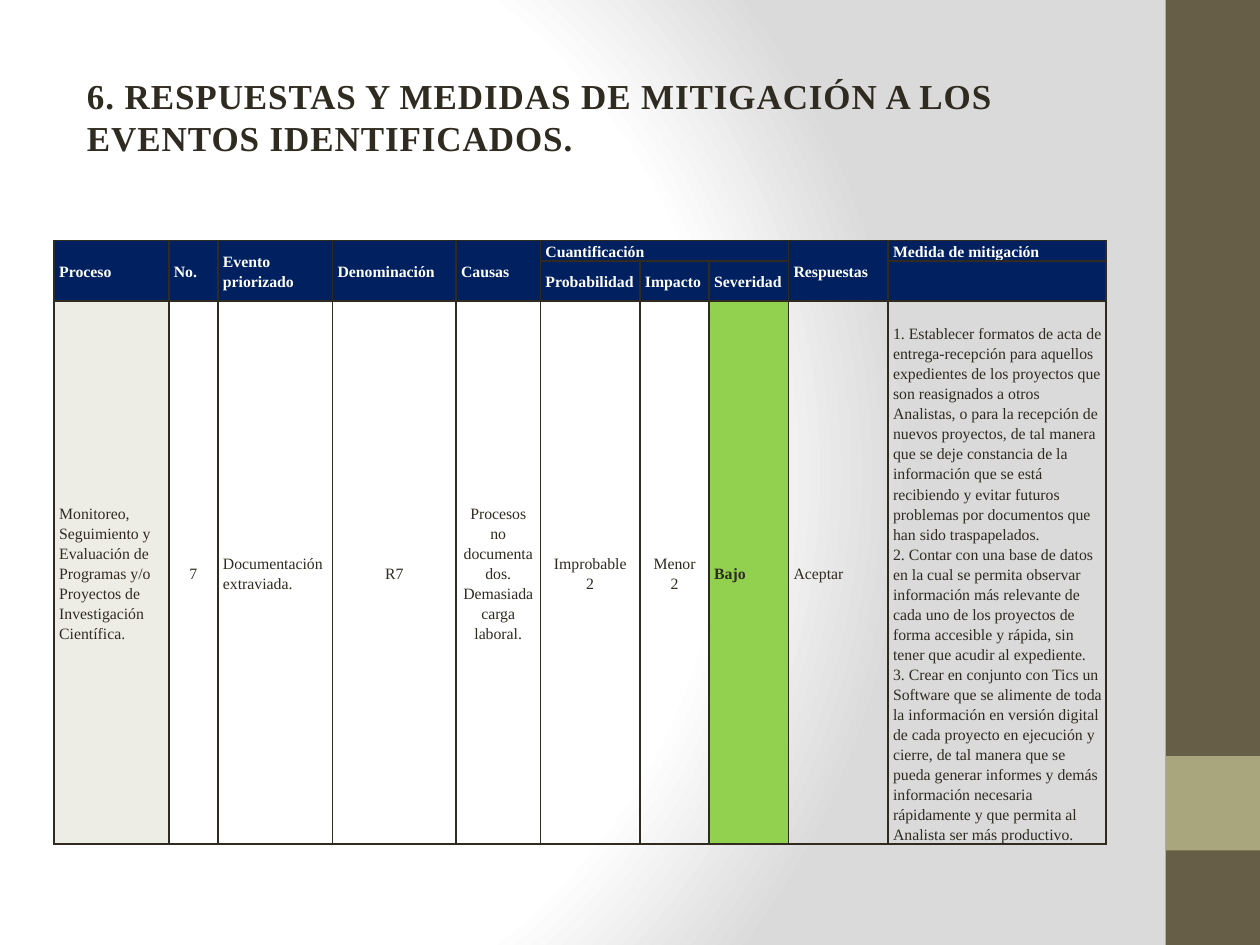
"""Build the slide on responses and mitigation measures for identified events."""
from lxml.etree import SubElement
from pptx import Presentation
from pptx.dml.color import RGBColor
from pptx.enum.shapes import MSO_SHAPE
from pptx.enum.text import MSO_ANCHOR, MSO_AUTO_SIZE, PP_ALIGN
from pptx.oxml import parse_xml
from pptx.oxml.ns import nsdecls, qn
from pptx.util import Inches, Pt

COLORS = {
    "ink": "2F2B20", "white": "FFFFFF", "gray": "DADADA", "brown": "675E47",
    "olive": "A9A57C", "navy": "002060", "cream": "EEEDE5", "green": "92D050",
}
FONT = "Times New Roman"
TITLE = "6. RESPUESTAS Y MEDIDAS DE MITIGACIÓN A LOS EVENTOS IDENTIFICADOS."
SIDEBAR = [("brown", 0, 7.5), ("olive", 6, 0.75)]
COLUMN_WIDTHS = [0.91, 0.39, 0.91, 0.98, 0.67, 0.79, 0.55, 0.63, 0.79, 1.73]
ROW_HEIGHTS = [0.16, 0.32, 4.31]
HEADERS = [
    ["Proceso", "No.", "Evento priorizado", "Denominación", "Causas",
     "Cuantificación", "", "", "Respuestas", "Medida de mitigación"],
    ["", "", "", "", "", "Probabilidad", "Impacto", "Severidad", "", ""],
]
MERGES = [((0, column), (1, column)) for column in (0, 1, 2, 3, 4, 8)] + [((0, 5), (0, 7))]
MEASURES = (
    "1. Establecer formatos de acta de entrega-recepción para aquellos expedientes de los "
    "proyectos que son reasignados a otros Analistas, o para la recepción de nuevos proyectos, "
    "de tal manera que se deje constancia de la información que se está recibiendo y evitar "
    "futuros problemas por documentos que han sido traspapelados.\n"
    "2. Contar con una base de datos en la cual se permita observar información más relevante "
    "de cada uno de los proyectos de forma accesible y rápida, sin tener que acudir al "
    "expediente.\n"
    "3. Crear en conjunto con Tics un Software que se alimente de toda la información en "
    "versión digital de cada proyecto en ejecución y cierre, de tal manera que se pueda generar "
    "informes y demás información necesaria rápidamente y que permita al Analista ser más "
    "productivo."
)
CENTER = {"align": PP_ALIGN.CENTER}
EVENT = [
    (["Monitoreo, Seguimiento y Evaluación de Programas y/o Proyectos de Investigación "
      "Científica."], "cream", {}),
    (["7"], None, CENTER),
    (["Documentación extraviada."], None, {}),
    (["R7"], None, CENTER),
    (["Procesos no documentados.", "Demasiada carga laboral."], None, CENTER),
    (["Improbable", "2"], None, CENTER),
    (["Menor", "2"], None, CENTER),
    (["Bajo"], "green", {"bold": True}),
    (["Aceptar"], None, {}),
    ([MEASURES], None, {"anchor": MSO_ANCHOR.BOTTOM, "right_margin": 0.02}),
]


def rgb(name):
    return RGBColor.from_string(COLORS[name])


def write_text(frame, paragraphs, size=9, color="ink", bold=False, align=PP_ALIGN.LEFT,
               line_spacing=None, tracking=None):
    for index, text in enumerate(paragraphs):
        paragraph = frame.add_paragraph() if index else frame.paragraphs[0]
        paragraph.text = text
        paragraph.alignment = align
        paragraph.line_spacing = line_spacing
        for run in paragraph.runs:
            run.font.name = FONT
            run.font.size = Pt(size)
            run.font.bold = bold
            run.font.color.rgb = rgb(color)
            if tracking:
                run.font._element.set("spc", str(tracking))


def paint_background(slide):
    slide.background.fill.solid()
    properties = slide.element.find(".//" + qn("p:bgPr"))
    stops = "".join(
        f'<a:gs pos="{position * 1000}"><a:srgbClr val="{COLORS[name]}"/></a:gs>'
        for position, name in [(0, "white"), (75, "white"), (100, "gray")]
    )
    properties.replace(properties[0], parse_xml(
        f'<a:gradFill {nsdecls("a")} rotWithShape="1"><a:gsLst>{stops}</a:gsLst>'
        '<a:path path="circle"><a:fillToRect l="20000" t="50000" r="100000" b="50000"/>'
        '</a:path></a:gradFill>'
    ))


def add_borders(cell):
    properties = cell._tc.get_or_add_tcPr()
    for side in ("L", "R", "T", "B"):
        line = SubElement(properties, qn(f"a:ln{side}"), w=str(Pt(1)))
        fill = SubElement(line, qn("a:solidFill"))
        SubElement(fill, qn("a:srgbClr"), val=COLORS["ink"])


def fill_cell(cell, paragraphs, fill=None, anchor=MSO_ANCHOR.MIDDLE, right_margin=0.04,
              **text_format):
    add_borders(cell)
    cell.margin_left, cell.margin_right = Inches(0.04), Inches(right_margin)
    cell.margin_top = cell.margin_bottom = 0
    cell.vertical_anchor = anchor
    if fill:
        cell.fill.solid()
        cell.fill.fore_color.rgb = rgb(fill)
    else:
        cell.fill.background()
    write_text(cell.text_frame, paragraphs, line_spacing=1.15, **text_format)


def add_sidebar(slide):
    for color, top, height in SIDEBAR:
        shape = slide.shapes.add_shape(
            MSO_SHAPE.RECTANGLE, Inches(9.25), Inches(top), Inches(0.75), Inches(height))
        shape.shadow.inherit = False
        shape.fill.solid()
        shape.fill.fore_color.rgb = rgb(color)
        shape.line.fill.background()


def add_title(slide):
    title = slide.shapes.title
    title.left, title.top = Inches(0.59), Inches(0.29)
    title.width, title.height = Inches(8.5), Inches(1.02)
    frame = title.text_frame
    frame.word_wrap = True
    frame.auto_size = MSO_AUTO_SIZE.NONE
    frame.vertical_anchor = MSO_ANCHOR.BOTTOM
    write_text(frame, [TITLE], size=20, bold=True, tracking=50)


def add_risk_table(slide):
    table = slide.shapes.add_table(
        len(ROW_HEIGHTS), len(COLUMN_WIDTHS), Inches(0.43), Inches(1.91),
        Inches(sum(COLUMN_WIDTHS)), Inches(sum(ROW_HEIGHTS))).table
    table.first_row = table.horz_banding = False
    for column, width in zip(table.columns, COLUMN_WIDTHS):
        column.width = Inches(width)
    for row, height in zip(table.rows, ROW_HEIGHTS):
        row.height = Inches(height)
    for row, labels in enumerate(HEADERS):
        for column, label in enumerate(labels):
            fill_cell(table.cell(row, column), [label], fill="navy", color="white", bold=True)
    for column, (paragraphs, fill, options) in enumerate(EVENT):
        fill_cell(table.cell(2, column), paragraphs, fill=fill, **options)
    for first, last in MERGES:
        table.cell(*first).merge(table.cell(*last))


def main():
    presentation = Presentation()
    presentation.slide_width, presentation.slide_height = Inches(10), Inches(7.5)
    slide = presentation.slides.add_slide(presentation.slide_layouts[5])
    paint_background(slide)
    add_sidebar(slide)
    add_title(slide)
    add_risk_table(slide)
    presentation.save("out.pptx")


if __name__ == "__main__":
    main()
